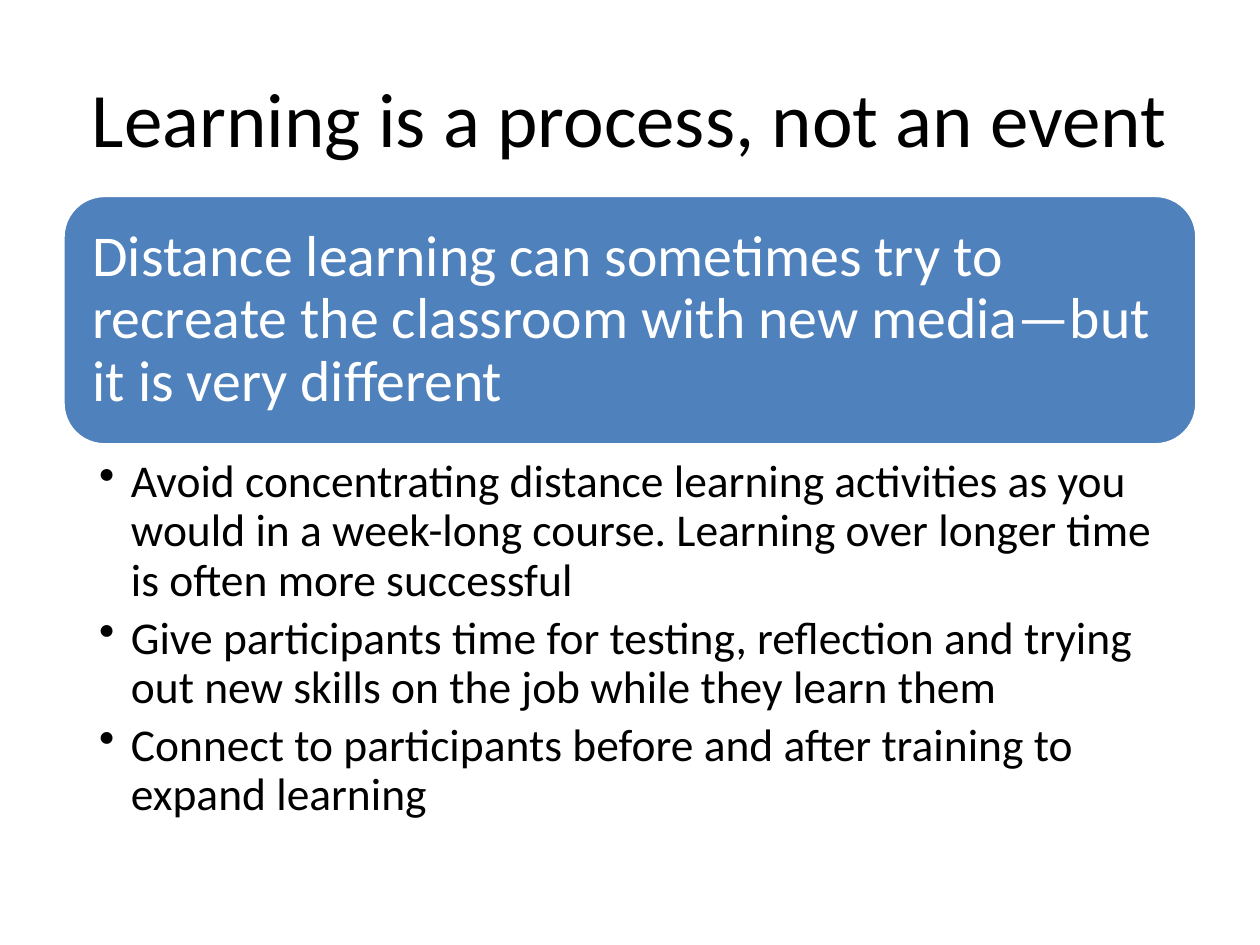
from lxml import etree
from pptx import Presentation
from pptx.dml.color import RGBColor
from pptx.enum.shapes import MSO_SHAPE
from pptx.enum.text import MSO_ANCHOR, PP_ALIGN
from pptx.oxml.ns import qn
from pptx.util import Cm, Pt

ROUND = MSO_SHAPE.ROUNDED_RECTANGLE
TOP, MIDDLE = MSO_ANCHOR.TOP, MSO_ANCHOR.MIDDLE
LEFT, CENTER = PP_ALIGN.LEFT, PP_ALIGN.CENTER

COLORS = {"ink": "000000", "paper": "FFFFFF", "panel": "4F81BD"}
EDGE, WIDTH = Cm(1.27), Cm(22.86)

TITLE = "Learning is a process, not an event"
CLAIM = ("Distance learning can sometimes try to recreate the classroom "
         "with new media—but it is very different")
TIPS = [
    "Avoid concentrating distance learning activities as you would in a "
    "week-long course. Learning over longer time is often more successful",
    "Give participants time for testing, reflection and trying out new "
    "skills on the job while they learn them",
    "Connect to participants before and after training to expand learning",
]


def color(name):
    """Return the named colour."""
    return RGBColor.from_string(COLORS[name])


def assign(item, values):
    """Set each named value on an object."""
    for name, value in values.items():
        setattr(item, name, value)


def add_bullet(para):
    """Give a paragraph a hanging bullet."""
    props = para._p.get_or_add_pPr()
    props.set("marL", str(Cm(0.64)))
    props.set("indent", str(-Cm(0.64)))
    etree.SubElement(props, qn("a:buChar")).set("char", "•")


def write(shape, lines, size, ink, frame, para, bullet=False):
    """Fill a shape with formatted paragraphs."""
    text = shape.text_frame
    text.text = "\n".join(lines)
    assign(text, {"word_wrap": True, **frame})
    for item in text.paragraphs:
        if bullet:
            add_bullet(item)
        assign(item, para)
        assign(item.font, {"name": "Calibri", "size": Pt(size)})
        item.font.color.rgb = color(ink)


def add_title(slide):
    """Place and format the title."""
    title = slide.shapes.title
    assign(title, {"left": EDGE, "top": Cm(0.76),
                   "width": WIDTH, "height": Cm(3.18)})
    write(title, [TITLE], 44, "ink",
          {"vertical_anchor": MIDDLE}, {"alignment": CENTER})


def add_panel(slide):
    """Draw the rounded panel with the main claim."""
    panel = slide.shapes.add_shape(ROUND, EDGE, Cm(3.94), WIDTH, Cm(5.03))
    panel.shadow.inherit = False
    panel.fill.solid()
    panel.fill.fore_color.rgb = color("panel")
    panel.line.color.rgb = color("paper")
    panel.line.width = Pt(2)
    pad = Cm(0.35)
    write(panel, [CLAIM], 33, "paper",
          {"vertical_anchor": MIDDLE, "margin_left": pad, "margin_right": pad,
           "margin_top": pad, "margin_bottom": pad},
          {"alignment": LEFT, "line_spacing": 0.9})


def add_tips(slide):
    """Add the bulleted advice below the panel."""
    box = slide.shapes.add_textbox(EDGE, Cm(9.12), WIDTH, Cm(7.77))
    write(box, TIPS, 26, "ink",
          {"vertical_anchor": TOP, "margin_left": Cm(0.73),
           "margin_right": Cm(0.66)},
          {"alignment": LEFT, "line_spacing": 0.9, "space_after": Pt(5.2)},
          bullet=True)


def main():
    """Build and save the slide."""
    deck = Presentation()
    assign(deck, {"slide_width": Cm(25.4), "slide_height": Cm(19.05)})
    slide = deck.slides.add_slide(deck.slide_layouts[5])
    add_title(slide)
    add_panel(slide)
    add_tips(slide)
    deck.save("out.pptx")


if __name__ == "__main__":
    main()
